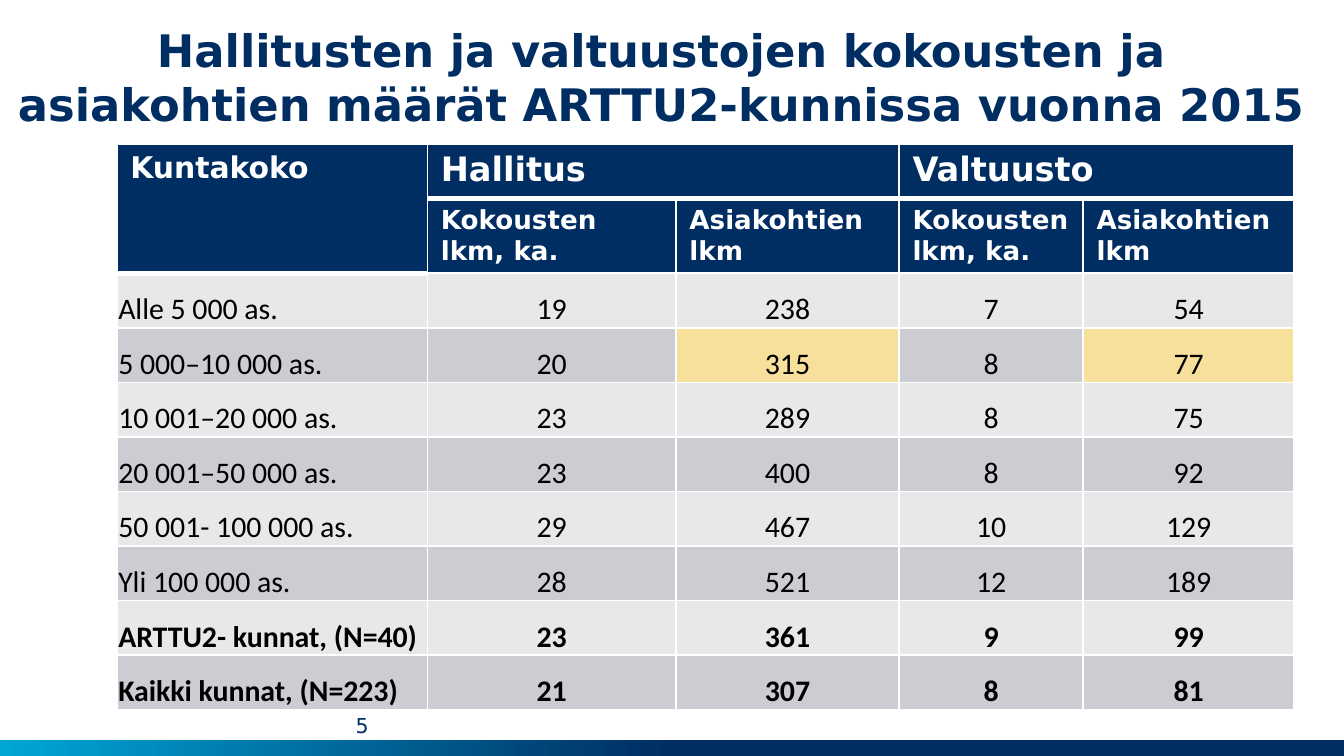
from pptx import Presentation
from pptx.dml.color import RGBColor
from pptx.enum.shapes import MSO_SHAPE as Shape
from pptx.enum.text import MSO_ANCHOR as Anchor, MSO_AUTO_SIZE as AutoSize, PP_ALIGN as Align
from pptx.oxml import parse_xml
from pptx.oxml.ns import nsdecls
from pptx.util import Inches, Pt

TITLE = "Hallitusten ja valtuustojen kokousten ja asiakohtien määrät ARTTU2-kunnissa vuonna 2015"
GROUPS = ["Hallitus", "Valtuusto"]
MEASURES = ["Kokousten lkm, ka.", "Asiakohtien lkm"]
ROWS = [
    ("Alle 5 000 as.", 19, 238, 7, 54),
    ("5 000–10 000 as.", 20, 315, 8, 77),
    ("10 001–20 000 as.", 23, 289, 8, 75),
    ("20 001–50 000 as.", 23, 400, 8, 92),
    ("50 001- 100 000 as.", 29, 467, 10, 129),
    ("Yli 100 000 as.", 28, 521, 12, 189),
    ("ARTTU2- kunnat, (N=40)", 23, 361, 9, 99),
    ("Kaikki kunnat, (N=223)", 21, 307, 8, 81),
]
COL_WIDTHS = [2.31, 1.85, 1.66, 1.37, 1.57]
HEADER_ROWS = 2
SUMMARY_ROWS = 2
HIGHLIGHTS = {(1, 2), (1, 4)}
NAVY, CYAN, WHITE, BLACK = "002E63", "00A6D6", "FFFFFF", "000000"
BANDS = ["E7E8EA", "CCCDD3"]
YELLOW = "F7E09C"
HEAD_FONT, BODY_FONT = "DejaVu Sans", "Calibri"


def rgb(value):
    return RGBColor.from_string(value)


def write(box, text, size, color, font=HEAD_FONT, bold=False, align=Align.LEFT,
          anchor=Anchor.TOP, margins=(0.1, 0.05, 0.1, 0.05)):
    box.vertical_anchor = anchor
    box.margin_left, box.margin_top, box.margin_right, box.margin_bottom = map(Inches, margins)
    tf = getattr(box, "text_frame", box)
    tf.word_wrap = True
    p = tf.paragraphs[0]
    p.alignment = align
    r = p.add_run()
    r.text = text
    r.font.name, r.font.size, r.font.bold = font, Pt(size), bold
    r.font.color.rgb = rgb(color)


def style_cell(cell, fill, bottom=1):
    tc_pr = cell._tc.get_or_add_tcPr()
    for side, width in (("L", 1), ("R", 1), ("T", 1), ("B", bottom)):
        tc_pr.append(parse_xml(
            f'<a:ln{side} {nsdecls("a")} w="{Pt(width)}"><a:solidFill>'
            f'<a:srgbClr val="{WHITE}"/></a:solidFill></a:ln{side}>'))
    cell.fill.solid()
    cell.fill.fore_color.rgb = rgb(fill)


def add_footer_band(slide):
    sp = slide.shapes.add_shape(Shape.RECTANGLE, 0, Inches(5.51), Inches(10), Inches(0.12))
    sp.shadow.inherit = False
    sp.line.fill.background()
    sp.fill.gradient()
    sp.fill.gradient_angle = 180
    for stop, (position, color) in zip(sp.fill.gradient_stops, [(0.5, NAVY), (1, CYAN)]):
        stop.position = position
        stop.color.rgb = rgb(color)


def add_title(slide):
    sp = slide.shapes.title
    sp.left, sp.top, sp.width, sp.height = map(Inches, (0.07, 0.21, 9.7, 0.81))
    sp.text_frame.auto_size = AutoSize.NONE
    write(sp.text_frame, TITLE, 24, NAVY, bold=True, align=Align.CENTER,
          anchor=Anchor.BOTTOM, margins=(0, 0.05, 0, 0.05))


def add_meeting_table(slide):
    table = slide.shapes.add_table(
        HEADER_ROWS + len(ROWS), len(COL_WIDTHS), Inches(0.87), Inches(1.07),
        Inches(sum(COL_WIDTHS)), Inches(4.06)).table
    for column, width in zip(table.columns, COL_WIDTHS):
        column.width = Inches(width)

    for i in range(HEADER_ROWS):
        for j in range(len(COL_WIDTHS)):
            style_cell(table.cell(i, j), NAVY, bottom=3 if i == 0 or j == 0 else 1)
    table.cell(0, 0).merge(table.cell(1, 0))
    write(table.cell(0, 0), "Kuntakoko", 16, WHITE, bold=True)
    for g, group in enumerate(GROUPS):
        first = 1 + g * len(MEASURES)
        table.cell(0, first).merge(table.cell(0, first + len(MEASURES) - 1))
        write(table.cell(0, first), group, 18, WHITE, bold=True)
        for m, measure in enumerate(MEASURES):
            write(table.cell(1, first + m), measure, 14, WHITE, bold=True)

    for i, row in enumerate(ROWS):
        for j, value in enumerate(row):
            cell = table.cell(HEADER_ROWS + i, j)
            style_cell(cell, YELLOW if (i, j) in HIGHLIGHTS else BANDS[i % 2])
            write(cell, str(value), 16, BLACK, font=BODY_FONT,
                  bold=i >= len(ROWS) - SUMMARY_ROWS,
                  align=Align.CENTER if j else Align.LEFT,
                  anchor=Anchor.BOTTOM, margins=(0.01, 0.01, 0.01, 0))


def add_page_number(slide):
    sp = slide.shapes.add_textbox(*map(Inches, (2.48, 5.29, 0.43, 0.22)))
    write(sp.text_frame, "5", 11, NAVY, align=Align.CENTER,
          anchor=Anchor.MIDDLE, margins=(0, 0, 0, 0))


def main():
    prs = Presentation()
    prs.slide_width = Inches(10)
    prs.slide_height = prs.slide_width * 9 // 16
    slide = prs.slides.add_slide(prs.slide_layouts[5])
    add_footer_band(slide)
    add_title(slide)
    add_meeting_table(slide)
    add_page_number(slide)
    prs.save("out.pptx")


if __name__ == "__main__":
    main()
